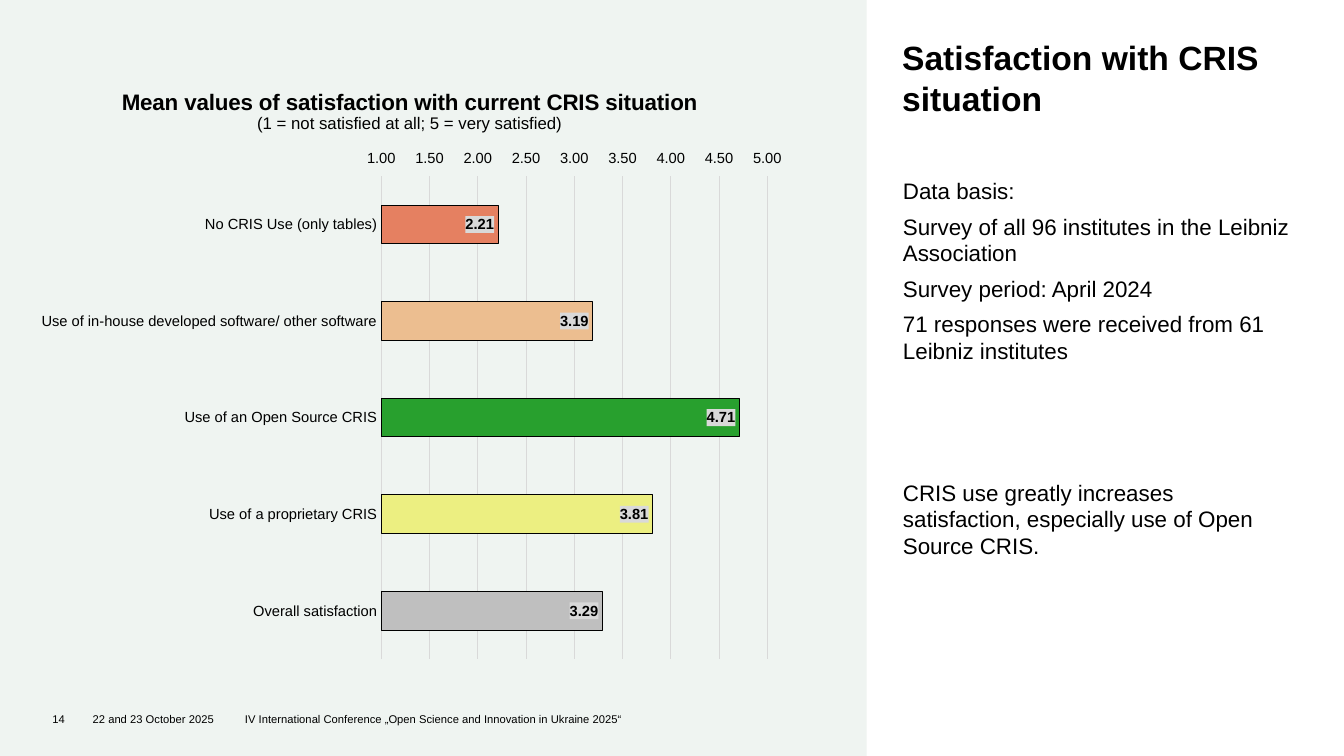
from lxml import etree
from pptx import Presentation
from pptx.chart.data import CategoryChartData
from pptx.dml.color import RGBColor
from pptx.enum.chart import XL_CHART_TYPE, XL_LABEL_POSITION, XL_TICK_MARK
from pptx.enum.shapes import MSO_SHAPE
from pptx.oxml import parse_xml
from pptx.oxml.ns import nsdecls, qn
from pptx.util import Pt


def rgb(value):
    return RGBColor.from_string(value)


def set_all(obj, values):
    for name, value in values.items():
        setattr(obj, name, value)


def set_layout(parent, index, **fractions):
    """Place a chart part by fractions of the chart area."""
    for old in parent.findall(qn("c:layout")):
        parent.remove(old)
    layout = parse_xml(f"<c:layout {nsdecls('c')}><c:manualLayout/></c:layout>")
    parent.insert(index, layout)
    for tag, value in fractions.items():
        etree.SubElement(layout[0], qn(f"c:{tag}")).set("val", str(value))


class SlideBuilder:
    font_name = "Arial"
    ink = "000000"
    grid = "D9D9D9"

    def __init__(self, s):
        self.s = s

    def style(self, font, size, bold=False):
        set_all(font, {"name": self.font_name, "size": Pt(size), "bold": bold})
        font.color.rgb = rgb(self.ink)

    def line(self, line, color):
        line.color.rgb = rgb(color)
        line.width = Pt(0.75)

    def panel(self, x, y, w, h, color):
        sp = self.s.shapes.add_shape(MSO_SHAPE.RECTANGLE, Pt(x), Pt(y), Pt(w), Pt(h))
        sp.shadow.inherit = False
        sp.fill.solid()
        sp.fill.fore_color.rgb = rgb(color)
        sp.line.fill.background()

    def text(self, x, y, w, h, lines, size, bold=False, after=0):
        tf = self.s.shapes.add_textbox(Pt(x), Pt(y), Pt(w), Pt(h)).text_frame
        set_all(tf, {"word_wrap": True, "margin_left": 0, "margin_right": 0,
                     "margin_top": 0, "margin_bottom": Pt(3.6)})
        for i, line in enumerate(lines):
            p = tf.paragraphs[0] if i == 0 else tf.add_paragraph()
            p.space_after = Pt(after)
            r = p.add_run()
            r.text = line
            self.style(r.font, size, bold)
        return tf

    def bar_chart(self, x, y, w, h, bars, title):
        data = CategoryChartData(number_format="0.00")
        data.categories = [name for name, _, _ in bars]
        data.add_series("Series 1", [value for _, value, _ in bars])
        chart = self.s.shapes.add_chart(XL_CHART_TYPE.BAR_STACKED, Pt(x), Pt(y),
                                        Pt(w), Pt(h), data).chart
        chart.has_legend = False
        self.style(chart.font, 10.5)

        # Title
        tf = chart.chart_title.text_frame
        for i, (line, size, bold) in enumerate(title):
            p = tf.paragraphs[0] if i == 0 else tf.add_paragraph()
            r = p.add_run()
            r.text = line
            self.style(r.font, size, bold)
        chart.chart_title.include_in_layout = False
        set_layout(chart.chart_title._element, 1, xMode="edge", yMode="edge",
                   x=0.12, y=0.03)

        # Axes
        cat, val = chart.category_axis, chart.value_axis
        set_all(cat, {"reverse_order": True, "major_tick_mark": XL_TICK_MARK.NONE})
        set_all(val, {"minimum_scale": 1, "maximum_scale": 5, "major_unit": 0.5,
                      "has_major_gridlines": True})
        set_all(val.tick_labels, {"number_format": "0.00",
                                  "number_format_is_linked": False})
        for axis in (cat, val):
            self.style(axis.tick_labels.font, 10.5)
        self.line(cat.format.line, self.grid)
        self.line(val.major_gridlines.format.line, self.grid)
        val.format.line.fill.background()
        set_layout(chart._chartSpace.chart.plotArea, 0, layoutTarget="inner",
                   xMode="edge", yMode="edge", x=0.46, y=0.18, w=0.5, h=0.8)

        # Bars
        plot = chart.plots[0]
        set_all(plot, {"gap_width": 150, "overlap": 100, "vary_by_categories": False})
        for i, (_, _, color) in enumerate(bars):
            point = plot.series[0].points[i].format
            point.fill.solid()
            point.fill.fore_color.rgb = rgb(color)
            self.line(point.line, self.ink)

        # Value labels on a grey ground
        labels = plot.series[0].data_labels
        set_all(labels, {"show_value": True, "position": XL_LABEL_POSITION.INSIDE_END,
                         "number_format": "0.00", "number_format_is_linked": False})
        self.style(labels.font, 10.5, True)
        labels._element.find(qn("c:txPr")).addprevious(parse_xml(
            f"<c:spPr {nsdecls('c', 'a')}><a:solidFill>"
            f'<a:srgbClr val="{self.grid}"/></a:solidFill></c:spPr>'))


def main():
    prs = Presentation()
    prs.slide_width, prs.slide_height = Pt(960), Pt(540)
    slide = SlideBuilder(prs.slides.add_slide(prs.slide_layouts[6]))

    # Chart side
    slide.panel(0, 0, 619, 540, "EFF4F1")
    slide.bar_chart(
        18.7, 48.2, 551.5, 431.3,
        [("No CRIS Use (only tables)", 2.21, "E58061"),
         ("Use of in-house developed software/ other software", 3.19, "ECBE90"),
         ("Use of an Open Source CRIS", 4.71, "28A02E"),
         ("Use of a proprietary CRIS", 3.81, "ECEF81"),
         ("Overall satisfaction", 3.29, "BFBFBF")],
        [("Mean values of satisfaction with current CRIS situation", 16, True),
         ("(1 = not satisfied at all; 5 = very satisfied)", 12, False)])

    # Text side
    slide.text(644.4, 26.6, 296.6, 67, ["Satisfaction with CRIS situation"],
               24, bold=True)
    body = slide.text(
        645, 126.7, 277.5, 359.3,
        ["Data basis:",
         "Survey of all 96 institutes in the Leibniz Association",
         "Survey period: April 2024",
         "71 responses were received from 61 Leibniz institutes",
         "CRIS use greatly increases satisfaction, especially use of Open Source CRIS."],
        16, after=6)
    body.paragraphs[-1].space_before = Pt(76)

    # Footer
    for x, w, line in [
            (37.4, 28, "14"),
            (66.2, 108.7, "22 and 23 October 2025"),
            (175, 570, "IV International Conference „Open Science and Innovation in Ukraine 2025“")]:
        slide.text(x, 509, w, 11.5, [line], 8)

    prs.save("out.pptx")


if __name__ == "__main__":
    main()
